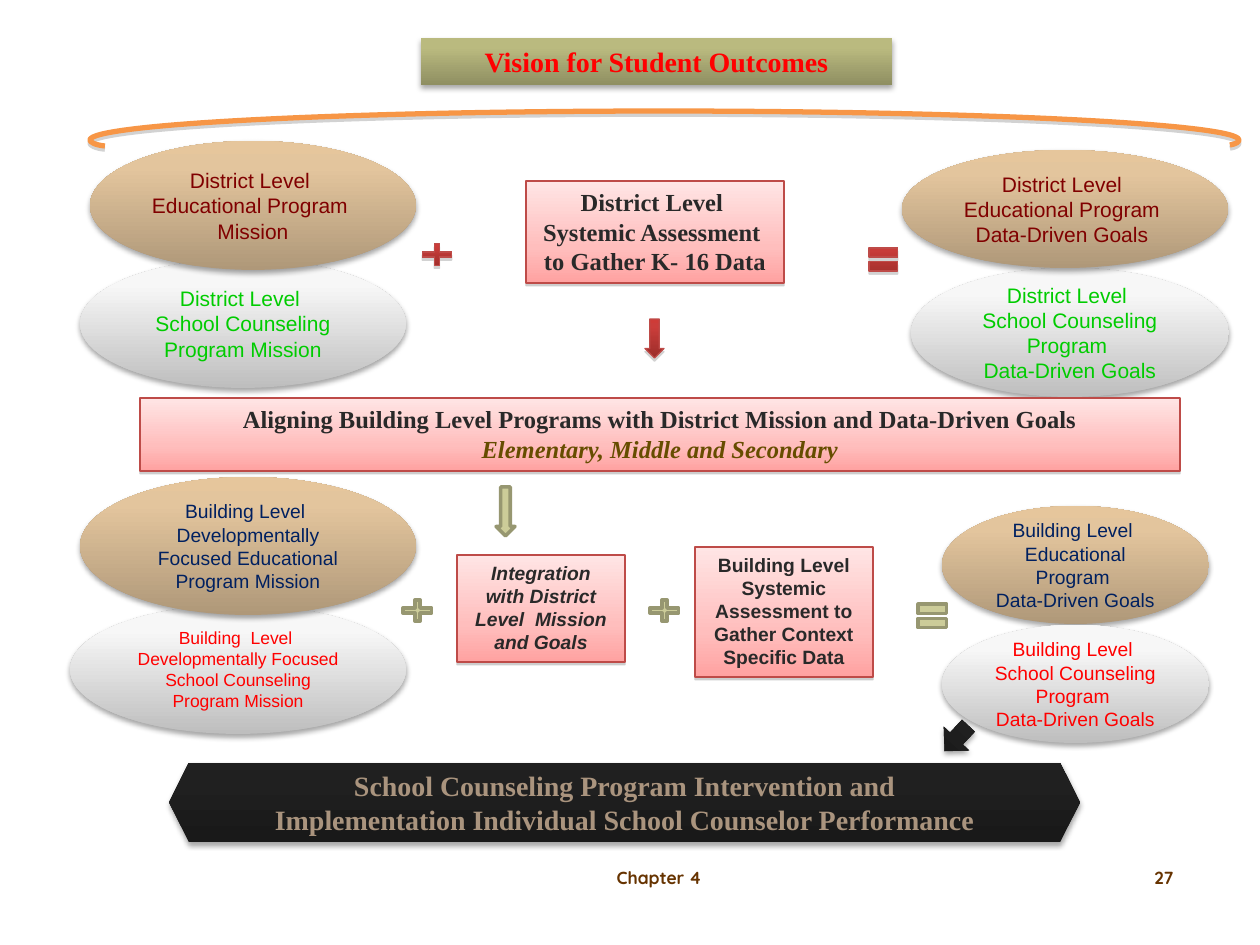
from dataclasses import dataclass
from typing import Optional

from lxml import etree
from pptx import Presentation
from pptx import util as u
from pptx.dml.color import RGBColor
from pptx.enum import shapes, text
from pptx.oxml.ns import qn

SCALE = 914400 / 126  # EMU in one px
FORM = shapes.MSO_SHAPE

INK = RGBColor(0x29, 0x29, 0x29)
RED = RGBColor(0xFF, 0x00, 0x00)
GREEN = RGBColor(0x00, 0xCC, 0x00)
MAROON = RGBColor(0x80, 0x00, 0x00)
NAVY = RGBColor(0x00, 0x20, 0x60)
OLIVE_BROWN = RGBColor(0x66, 0x4D, 0x00)
TAUPE = RGBColor(0xAA, 0x94, 0x7E)
BROWN = RGBColor(0x66, 0x33, 0x00)
ORANGE = RGBColor(0xF7, 0x96, 0x46)
BRICK = RGBColor(0xBE, 0x4B, 0x48)
KHAKI = RGBColor(0xCC, 0xCC, 0x99)
KHAKI_DARK = RGBColor(0x97, 0x97, 0x71)

# colour, opacity %, blur pt, distance pt
DEEP = ("000000", 35, 3.1, 1.8)
SOFT = ("808080", 38, 0, 1.6)
HARD = ("808080", 35, 0, 1.8)


@dataclass
class Style:
    stops: tuple = ()  # (position %, colour), from the bottom up
    solid: Optional[RGBColor] = None
    outline: Optional[RGBColor] = None
    outline_pt: float = 0.75
    shadow: Optional[tuple] = None


@dataclass
class Type:
    font: str
    size: int
    color: RGBColor
    bold: bool = False
    italic: bool = False


GRAY = Style(((0, "BEBEBE"), (80, "F7F7F7"), (100, "F8F8F8")), shadow=DEEP)
TAN = Style(((0, "AF9879"), (80, "E3C59D"), (100, "E6C69C")), shadow=DEEP)
OLIVE = Style(((0, "8F8F62"), (80, "BABA7F"), (100, "BCBC7E")), shadow=DEEP)
BLACK = Style(((0, "191919"), (80, "202020"), (100, "202020")), shadow=DEEP)
PINK = Style(((0, "FFA2A1"), (35, "FFBEBD"), (100, "FFE5E5")), outline=BRICK, shadow=SOFT)
CRIMSON = Style(((0, "9B2D2A"), (80, "CB3D3A"), (100, "CE3B37")), outline=BRICK, shadow=HARD)
SAGE = Style(solid=KHAKI, outline=KHAKI_DARK, outline_pt=2)
SWEEP = Style(outline=ORANGE, outline_pt=3, shadow=HARD)

SERIF = "Times New Roman"
SANS = "Arial"
HEADING = Type(SERIF, 14, INK, bold=True)


def emu(px):
    return u.Emu(round(px * SCALE))


def apply_style(shape, style):
    if style.stops:
        shape.fill.gradient()
        shape.fill.gradient_angle = 90
        stop_list = shape._element.spPr.find(".//" + qn("a:gsLst"))
        for old in list(stop_list):
            stop_list.remove(old)
        for position, color in style.stops:
            stop = etree.SubElement(stop_list, qn("a:gs"), pos=str(position * 1000))
            etree.SubElement(stop, qn("a:srgbClr"), val=color)
    elif style.solid:
        shape.fill.solid()
        shape.fill.fore_color.rgb = style.solid
    else:
        shape.fill.background()
    if style.outline:
        shape.line.color.rgb = style.outline
        shape.line.width = u.Pt(style.outline_pt)
    else:
        shape.line.fill.background()
    shape.shadow.inherit = False
    if style.shadow:
        color, opacity, blur, distance = style.shadow
        effects = shape._element.spPr.find(qn("a:effectLst"))
        outer = etree.SubElement(effects, qn("a:outerShdw"), blurRad=str(u.Pt(blur)),
                                 dist=str(u.Pt(distance)), dir="5400000", rotWithShape="0")
        tint = etree.SubElement(outer, qn("a:srgbClr"), val=color)
        etree.SubElement(tint, qn("a:alpha"), val=str(opacity * 1000))


def format_paragraph(paragraph, kind, align=text.PP_ALIGN.CENTER):
    paragraph.alignment = align
    for run in paragraph.runs:
        font = run.font
        font.name, font.size = kind.font, u.Pt(kind.size)
        font.bold, font.italic = kind.bold, kind.italic
        font.color.rgb = kind.color


def write(shape, words, kind, anchor=text.MSO_ANCHOR.TOP, align=text.PP_ALIGN.CENTER):
    frame = shape.text_frame
    frame.text = words
    frame.word_wrap = True
    frame.vertical_anchor = anchor
    for paragraph in frame.paragraphs:
        format_paragraph(paragraph, kind, align)


def add_form(slide, form, box, style):
    shape = slide.shapes.add_shape(form, *map(emu, box))
    apply_style(shape, style)
    return shape


def add_oval(slide, box, style, words, kind):
    write(add_form(slide, FORM.OVAL, box, style), words, kind, text.MSO_ANCHOR.MIDDLE)


def add_panel(slide, box, words, kind):
    panel = add_form(slide, FORM.RECTANGLE, box, PINK)
    write(panel, words, kind)
    return panel


def add_plus(slide, box, style):
    add_form(slide, FORM.MATH_PLUS, box, style).adjustments[0] = 0.175


def vision_title(slide, left, top, width, height):
    title = slide.shapes.title
    title.left, title.top, title.width, title.height = map(emu, (left, top, width, height))
    apply_style(title, OLIVE)
    write(title, "Vision for Student Outcomes", Type(SERIF, 16, RED, bold=True))
    title.text_frame.auto_size = text.MSO_AUTO_SIZE.NONE


def sweep(slide, left, top, width, height):
    """Upper half of a flat ellipse, with both ends curling in a little."""
    middle, side = width // 2, height // 2
    curves = (((5, 34), (0, 31), (0, side)),
              ((0, 13), (middle * 9 // 20, 0), (middle, 0)),
              ((middle * 31 // 20, 0), (width, 13), (width, side)),
              ((width, 31), (width - 3, 33), (width - 9, 34)))
    builder = slide.shapes.build_freeform(15, 35, scale=SCALE)
    builder.add_line_segments([curve[-1] for curve in curves], close=False)
    arch = builder.convert_to_shape(emu(left), emu(top))
    outline = arch._element.spPr.find(".//" + qn("a:path"))
    for line, curve in zip(outline.findall(qn("a:lnTo")), curves):
        bend = etree.Element(qn("a:cubicBezTo"))
        for x, y in curve:
            etree.SubElement(bend, qn("a:pt"), x=str(x), y=str(y))
        outline.replace(line, bend)
    outline.set("h", str(height))
    arch.height = emu(height)
    apply_style(arch, SWEEP)


def district_level(slide, left, top):
    education, counseling = Type(SANS, 12, MAROON), Type(SANS, 12, GREEN)
    add_oval(slide, (left + 831, top + 127, 318, 129), GRAY,
             "District Level \nSchool Counseling Program \nData-Driven Goals", counseling)
    add_oval(slide, (left + 822, top + 9, 326, 118), TAN,
             "District Level \nEducational Program \nData-Driven Goals ", education)
    add_oval(slide, (left, top + 118, 326, 129), GRAY,
             "District Level \nSchool Counseling Program Mission", counseling)
    add_oval(slide, (left + 10, top, 326, 129), TAN,
             "District Level \nEducational Program \nMission", education)
    add_panel(slide, (left + 446, top + 40, 258, 102),
              "District Level \nSystemic Assessment \nto Gather K- 16 Data", HEADING)
    add_plus(slide, (left + 337, top + 99, 40, 29), CRIMSON)
    add_form(slide, FORM.MATH_EQUAL, (left + 784, top + 99, 39, 39), CRIMSON)
    add_form(slide, FORM.DOWN_ARROW, (left + 565, top + 178, 19, 39), CRIMSON)


def alignment_bar(slide, left, top, width, height):
    bar = add_panel(slide, (left, top, width, height),
                    "Aligning Building Level Programs with District Mission and Data-Driven Goals\n"
                    "Elementary, Middle and Secondary", HEADING)
    format_paragraph(bar.text_frame.paragraphs[1], Type(SERIF, 14, OLIVE_BROWN, True, True))


def building_level(slide, left, top):
    education = Type(SANS, 11, NAVY)
    add_oval(slide, (left, top + 129, 336, 129), GRAY,
             "Building  Level \nDevelopmentally Focused School Counseling Program Mission",
             Type(SANS, 10, RED))
    add_oval(slide, (left + 10, top + 1, 336, 138), TAN,
             "Building Level \nDevelopmentally Focused Educational Program Mission", education)
    add_oval(slide, (left + 872, top + 30, 267, 118), TAN,
             "Building Level \nEducational Program \nData-Driven Goals ", education)
    add_oval(slide, (left + 872, top + 149, 267, 118), GRAY,
             "Building Level \nSchool Counseling Program \nData-Driven Goals ",
             Type(SANS, 11, RED))
    add_panel(slide, (left + 387, top + 79, 168, 107),
              "Integration with District Level  Mission and Goals", Type(SANS, 11, INK, True, True))
    add_panel(slide, (left + 625, top + 71, 178, 130),
              "Building Level Systemic Assessment to Gather Context Specific Data",
              Type(SANS, 11, INK, True))
    for plus_left in (328, 575):
        add_plus(slide, (left + plus_left, top + 120, 39, 29), SAGE)
    add_form(slide, FORM.MATH_EQUAL, (left + 843, top + 120, 39, 40), SAGE)
    add_form(slide, FORM.DOWN_ARROW, (left + 426, top + 11, 19, 49), SAGE)


def intervention_banner(slide, left, top, width, height):
    add_form(slide, FORM.DOWN_ARROW, (left + 770, top - 42, 35, 35), BLACK).rotation = 43.1
    banner = add_form(slide, FORM.HEXAGON, (left, top, width, height), BLACK)
    write(banner, "School Counseling Program Intervention and "
          "Implementation Individual School Counselor Performance",
          Type(SERIF, 16, TAUPE, bold=True), text.MSO_ANCHOR.MIDDLE)


def footer(slide, left, top, height):
    for offset, width, words, align in ((475, 262, "27", text.PP_ALIGN.RIGHT),
                                        (0, 420, "Chapter 4", text.PP_ALIGN.CENTER)):
        note = slide.shapes.add_textbox(*map(emu, (left + offset, top, width, height)))
        write(note, words, Type("Quicksand", 10, BROWN, bold=True), align=align)


def main():
    deck = Presentation()
    deck.slide_width, deck.slide_height = emu(1260), emu(945)
    slide = deck.slides.add_slide(deck.slide_layouts[5])
    vision_title(slide, 421, 38, 471, 47)
    sweep(slide, 90, 111, 1149, 59)
    district_level(slide, 80, 141)
    alignment_bar(slide, 140, 398, 1040, 73)
    building_level(slide, 70, 476)
    intervention_banner(slide, 169, 763, 911, 79)
    footer(slide, 449, 861, 63)
    deck.save("out.pptx")


if __name__ == "__main__":
    main()
